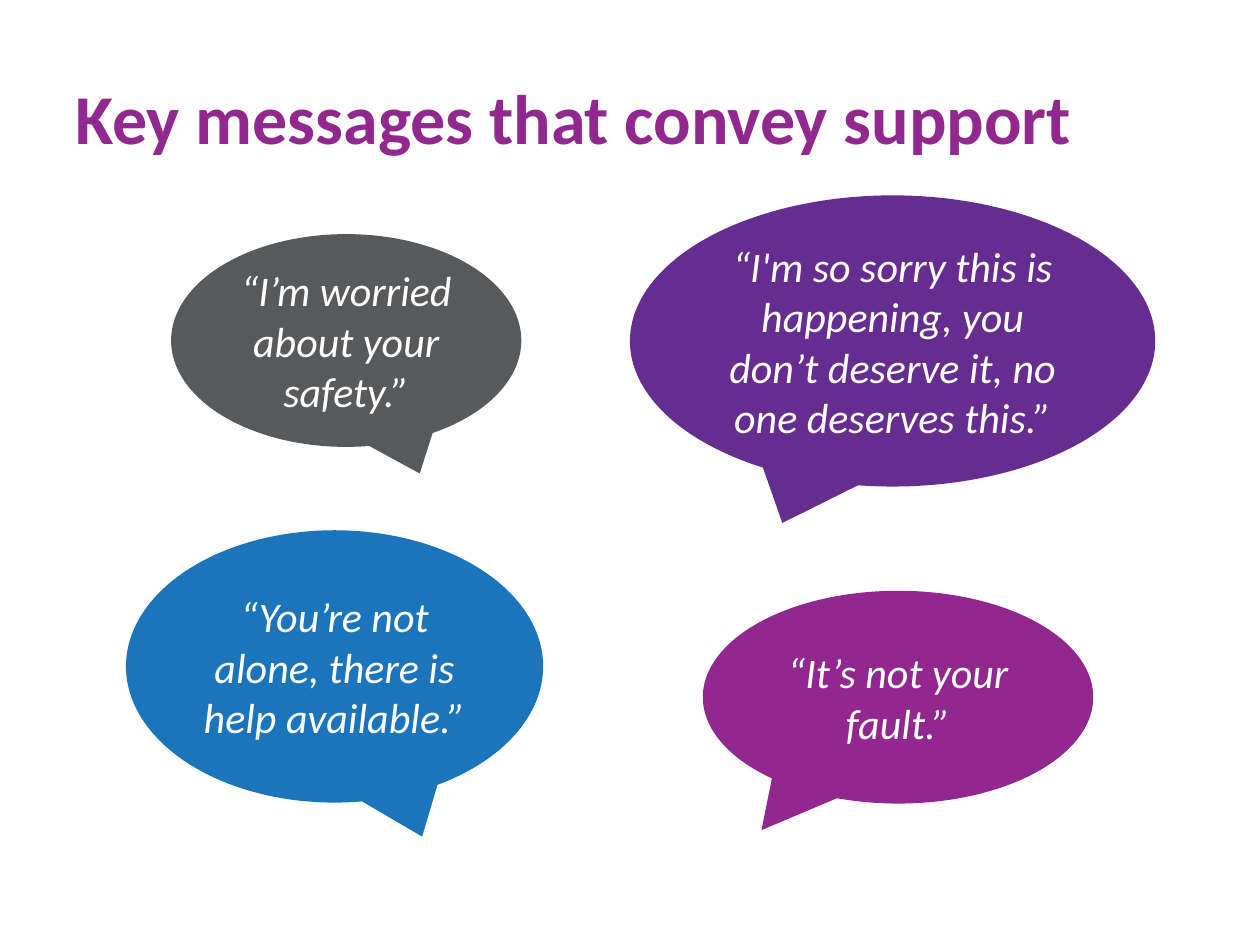
from dataclasses import dataclass

from pptx import Presentation
from pptx.dml.color import RGBColor
from pptx.enum.shapes import MSO_SHAPE
from pptx.enum.text import MSO_ANCHOR, PP_ALIGN
from pptx.shapes.autoshape import Shape
from pptx.slide import Slide
from pptx.util import Cm, Pt


@dataclass(frozen=True)
class Theme:
    font: str = "Calibri"
    head: Pt = Pt(40)
    body: Pt = Pt(24)
    white: str = "FFFFFF"
    plum: str = "92278F"
    violet: str = "662D91"
    blue: str = "1B75BC"
    gray: str = "58595B"


@dataclass(frozen=True)
class Bubble:
    text: str
    fill: str
    left: float
    top: float
    width: float
    height: float
    tail: float  # tip offset from the centre, as a share of the width


THEME = Theme()
DROP = 0.625  # tip offset below the centre, as a share of the height

BUBBLES = [
    Bubble("“I'm so sorry this is happening, you don’t deserve it, no one deserves this.”",
           THEME.violet, 12.7, 3.94, 10.59, 5.87, -0.21),
    Bubble("“You’re not alone, there is help available.”",
           THEME.blue, 2.54, 10.69, 8.41, 5.49, 0.21),
    Bubble("“I’m worried about your safety.”",
           THEME.gray, 3.45, 4.72, 7.06, 4.29, 0.21),
    Bubble("“It’s not your fault.”",
           THEME.plum, 14.17, 11.91, 7.87, 4.29, -0.35),
]


def write(shape: Shape, text: str, color: str, align: PP_ALIGN, style: dict) -> None:
    """Put one styled paragraph in the middle of a shape."""
    frame = shape.text_frame
    frame.word_wrap = True
    frame.vertical_anchor = MSO_ANCHOR.MIDDLE
    para = frame.paragraphs[0]
    para.alignment = align
    run = para.add_run()
    run.text = text
    for key, value in {"name": THEME.font, **style}.items():
        setattr(run.font, key, value)
    run.font.color.rgb = RGBColor.from_string(color)


def title(slide: Slide, text: str) -> None:
    box = slide.shapes.add_textbox(Cm(1.27), Cm(0.76), Cm(22.86), Cm(3.18))
    write(box, text, THEME.plum, PP_ALIGN.LEFT, {"size": THEME.head, "bold": True})


def bubble(slide: Slide, item: Bubble) -> None:
    shape = slide.shapes.add_shape(
        MSO_SHAPE.OVAL_CALLOUT,
        Cm(item.left), Cm(item.top), Cm(item.width), Cm(item.height))
    shape.adjustments[0] = item.tail
    shape.adjustments[1] = DROP
    shape.shadow.inherit = False
    shape.fill.solid()
    shape.fill.fore_color.rgb = RGBColor.from_string(item.fill)
    shape.line.fill.background()
    write(shape, item.text, THEME.white, PP_ALIGN.CENTER,
          {"size": THEME.body, "italic": True})


def main() -> None:
    deck = Presentation()
    deck.slide_width, deck.slide_height = Cm(25.4), Cm(19.05)
    slide = deck.slides.add_slide(deck.slide_layouts[6])

    # Heading
    title(slide, "Key messages that convey support")

    # Speech bubbles
    for item in BUBBLES:
        bubble(slide, item)

    deck.save("out.pptx")


if __name__ == "__main__":
    main()
